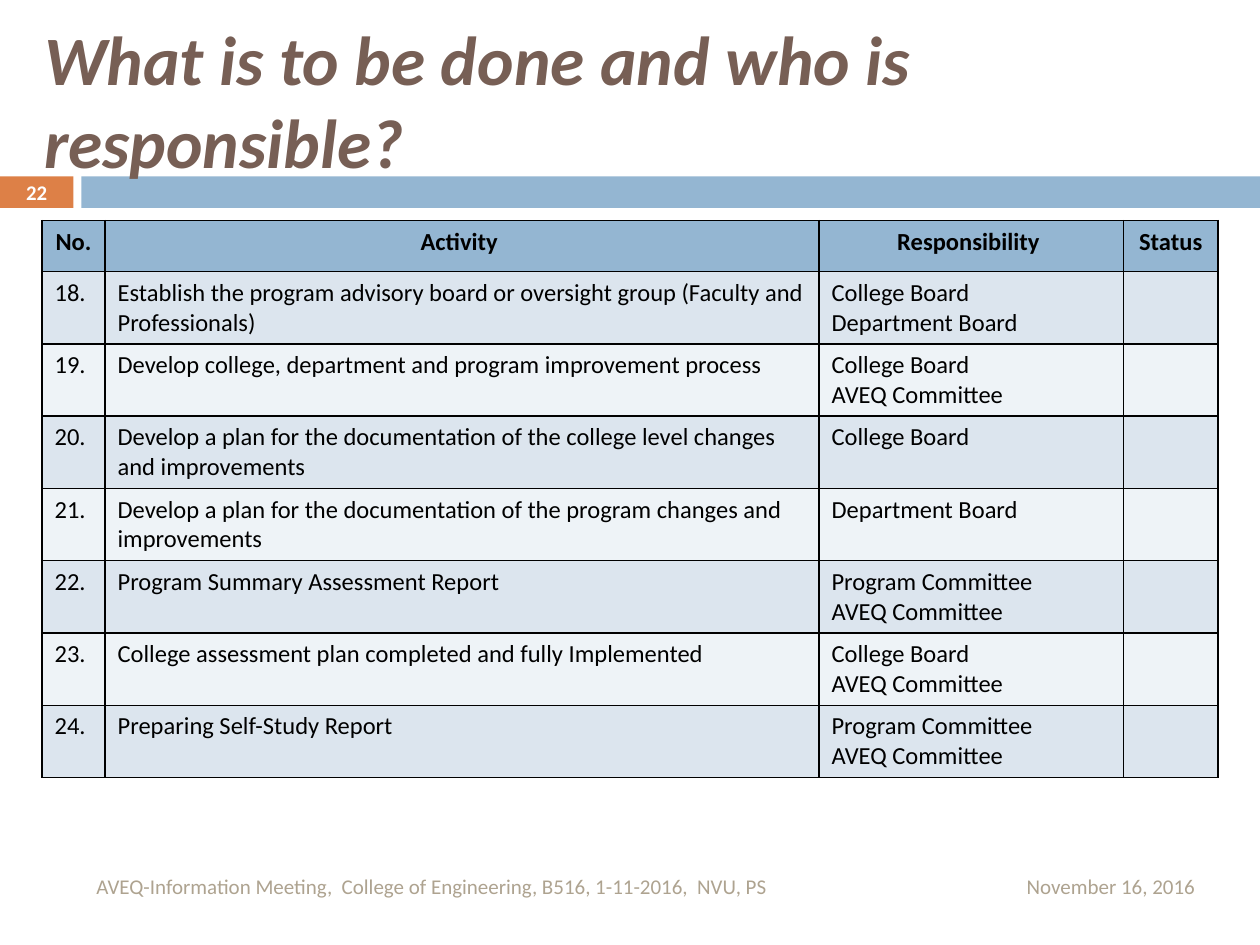
import pptx
import pptx.util
import pptx.dml.color
import pptx.enum.shapes
import pptx.enum.text
import pptx.oxml
import pptx.oxml.ns

Pt = pptx.util.Pt
ALIGN = pptx.enum.text.PP_ALIGN
MIDDLE = pptx.enum.text.MSO_ANCHOR.MIDDLE

# Content
TITLE = "What is to be done and who is responsible?"
HEADINGS = ["No.", "Activity ", "Responsibility ", "Status"]
FIRST_NUMBER = 18
ACTIVITIES = [
    ("Establish the program advisory board or oversight group (Faculty and Professionals)",
     ["College Board", "Department Board"]),
    ("Develop college, department and program improvement process",
     ["College Board", "AVEQ Committee"]),
    ("Develop a plan for the documentation of the college level changes and improvements",
     ["College Board"]),
    ("Develop a plan for the documentation of the program changes and improvements",
     ["Department Board"]),
    ("Program Summary Assessment Report", ["Program Committee", "AVEQ Committee"]),
    ("College assessment plan completed and fully Implemented",
     ["College Board", "AVEQ Committee"]),
    ("Preparing Self-Study Report", ["Program Committee", "AVEQ Committee"]),
]

# Formats
BLUE, ORANGE = "94B6D2", "DD8047"
BANDS = ["DCE5EE", "EEF3F7"]
TITLE_FONT = {"size": Pt(39.6), "bold": True, "italic": True, "color": "775F55"}
HEADING_FONT = {"size": Pt(14), "bold": True, "color": "000000"}
BODY_FONT = {"size": Pt(14), "bold": False, "color": "000000"}
NUMBER_FONT = {"size": Pt(11.9), "bold": True, "color": "FFFFFF"}
FOOTER_FONT = {"size": Pt(12), "color": "AEA390"}

# Places in points: left, top, width, height
TITLE_BOX = (18, 18, 700, 77.76)
BARS = [((0, 100.8, 42, 18), ORANGE), ((46.5, 100.8, 673.5, 18), BLUE)]
SMALL_TEXTS = [
    ("November 16, 2016", (576, 492, 114, 28.8), FOOTER_FONT, ALIGN.RIGHT),
    ("22", (0, 100.2, 42, 19.2), NUMBER_FONT, ALIGN.CENTER),
    ("AVEQ-Information Meeting,  College of Engineering, B516, 1-11-2016,  NVU, PS",
     (48, 492, 522, 28.8), FOOTER_FONT, ALIGN.LEFT),
]
TABLE_LEFT, TABLE_TOP = 24, 126
COLUMN_WIDTHS = [36, 408, 174, 54]
ROW_HEIGHTS = [29.2] + [41.3] * len(ACTIVITIES)


def rgb(hex_color):
    return pptx.dml.color.RGBColor.from_string(hex_color)


def fill_solid(part, hex_color):
    part.fill.solid()
    part.fill.fore_color.rgb = rgb(hex_color)


def write(frame, lines, font, align):
    frame.word_wrap = True
    frame.text = "\n".join(lines)
    for paragraph in frame.paragraphs:
        paragraph.alignment = align
        for target in [run.font for run in paragraph.runs] or [paragraph.font]:
            target.name = "Calibri"
            for key, value in font.items():
                if key == "color":
                    target.color.rgb = rgb(value)
                else:
                    setattr(target, key, value)


def add_borders(cell):
    properties = cell._tc.get_or_add_tcPr()
    for position, side in enumerate(["lnL", "lnR", "lnT", "lnB"]):
        properties.insert(position, pptx.oxml.parse_xml(
            f'<a:{side} {pptx.oxml.ns.nsdecls("a")} w="12700"><a:solidFill>'
            f'<a:srgbClr val="000000"/></a:solidFill></a:{side}>'))


presentation = pptx.Presentation()
presentation.slide_width, presentation.slide_height = Pt(720), Pt(540)
slide = presentation.slides.add_slide(presentation.slide_layouts[5])
shapes = slide.shapes

# Bars under the title
for box, color in BARS:
    bar = shapes.add_shape(pptx.enum.shapes.MSO_SHAPE.RECTANGLE, *map(Pt, box))
    bar.shadow.inherit = False
    fill_solid(bar, color)
    bar.line.fill.background()

# Title, brought in front of the bars
title = shapes.title
title.left, title.top, title.width, title.height = map(Pt, TITLE_BOX)
write(title.text_frame, [TITLE], TITLE_FONT, ALIGN.LEFT)
title.text_frame.auto_size = pptx.enum.text.MSO_AUTO_SIZE.NONE
title.text_frame.vertical_anchor = MIDDLE
shapes._spTree.append(title._element)

# Activity table
rows = [[[heading] for heading in HEADINGS]] + [
    [[f"{number}."], [activity], responsible, []]
    for number, (activity, responsible) in enumerate(ACTIVITIES, FIRST_NUMBER)]
table = shapes.add_table(
    len(rows), len(HEADINGS), Pt(TABLE_LEFT), Pt(TABLE_TOP),
    Pt(sum(COLUMN_WIDTHS)), Pt(sum(ROW_HEIGHTS))).table
for column, width in zip(table.columns, COLUMN_WIDTHS):
    column.width = Pt(width)
for r, (row, height) in enumerate(zip(rows, ROW_HEIGHTS)):
    table.rows[r].height = Pt(height)
    for c, lines in enumerate(row):
        cell = table.cell(r, c)
        fill_solid(cell, BANDS[(r - 1) % 2] if r else BLUE)
        add_borders(cell)
        write(cell.text_frame, lines, BODY_FONT if r else HEADING_FONT,
              ALIGN.LEFT if r else ALIGN.CENTER)

# Date, slide number and footer
for text, box, font, align in SMALL_TEXTS:
    frame = shapes.add_textbox(*map(Pt, box)).text_frame
    write(frame, [text], font, align)
    frame.vertical_anchor = MIDDLE

presentation.save("out.pptx")
